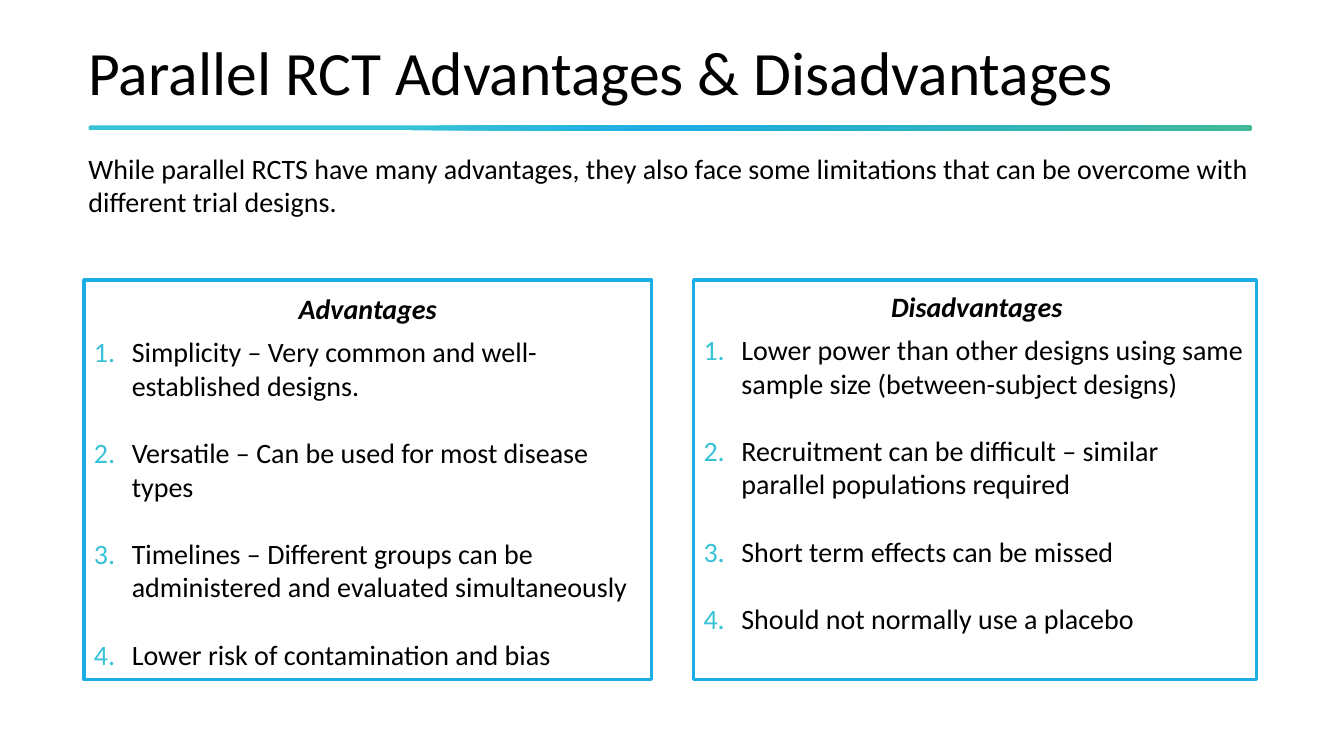
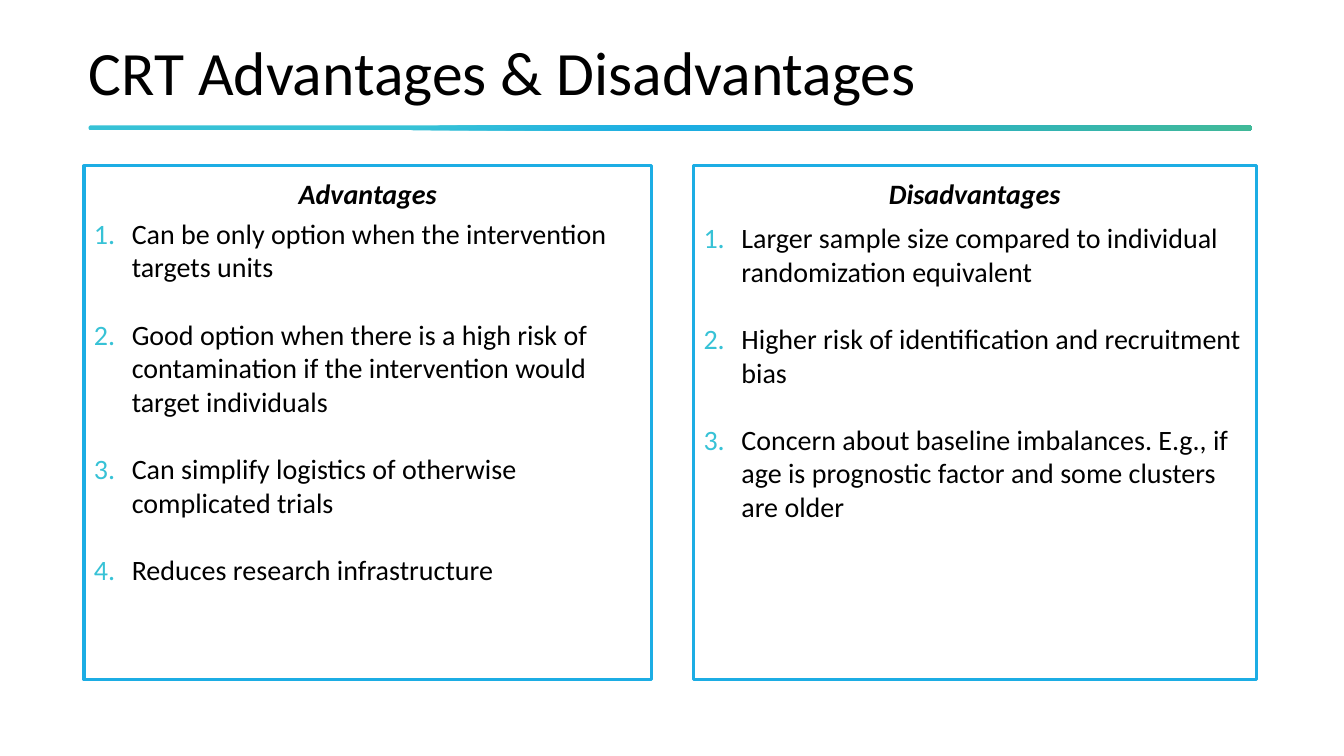
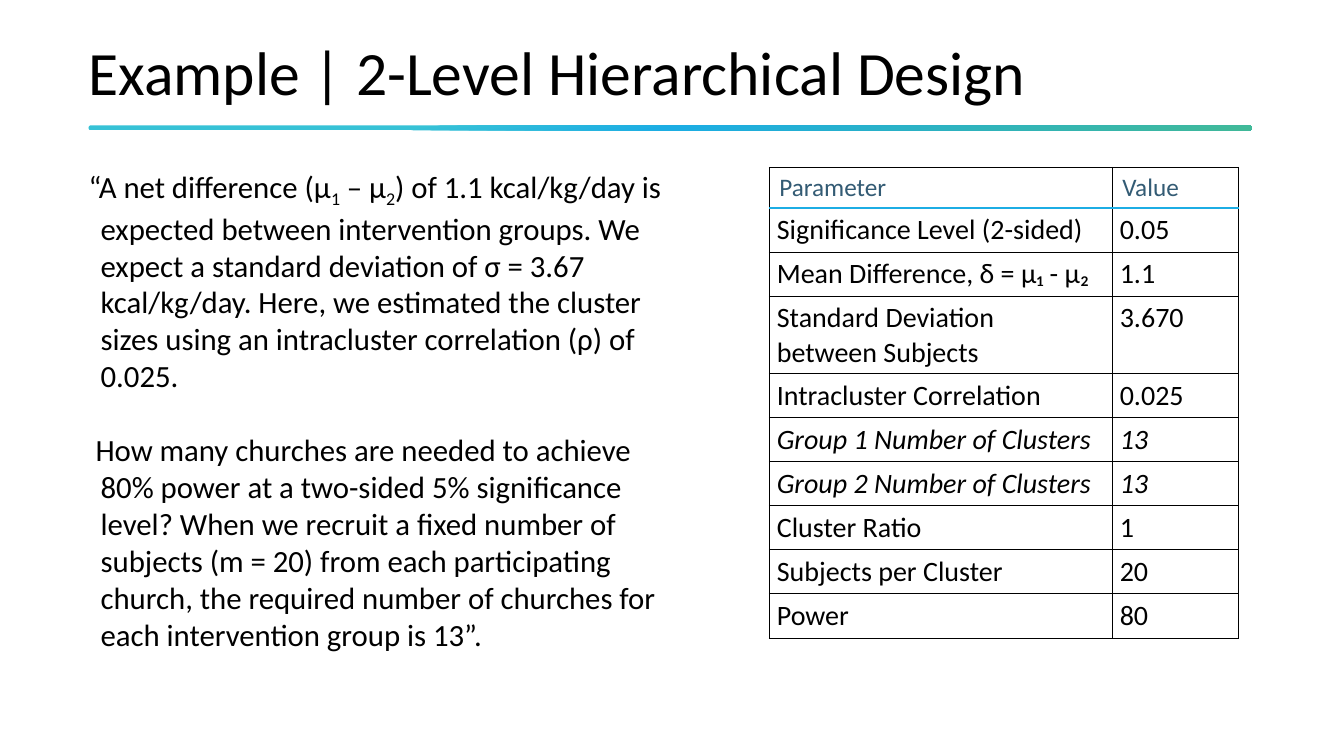
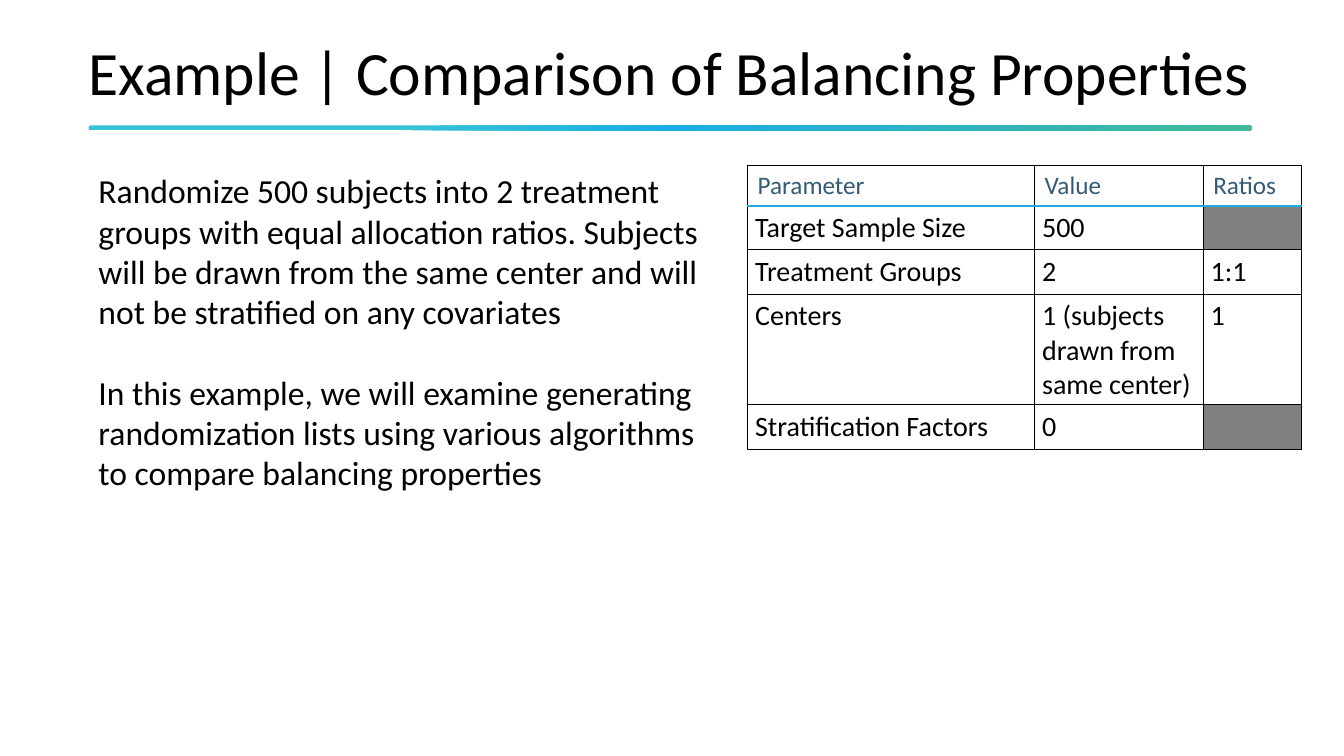
"""Build four slides on trial designs: two comparisons and two worked examples."""
from lxml import etree
from pptx import Presentation
from pptx.dml.color import RGBColor
from pptx.enum.shapes import MSO_SHAPE as Shape
from pptx.enum.text import MSO_ANCHOR as Anchor, PP_ALIGN as Align
from pptx.oxml import parse_xml
from pptx.oxml.ns import nsdecls, qn
from pptx.util import Pt

FONT = "Calibri"
BLACK, WHITE, GREY, NAVY = "000000", "FFFFFF", "808080", "335B74"
BLUE, CYAN, GREEN = "1CADE4", "37C2D6", "42BA97"
BODY_LEFT = 63.25
RULE_STOPS = [(28, CYAN), (50, BLUE), (100, GREEN)]


def rgb(hex_color):
    """Turn a hex string into a colour."""
    return RGBColor.from_string(hex_color)


def add_text(slide, box, texts, size, inset=(7.2, 3.6), gap=0):
    """Add a text box; each text is a string or a list of run strings."""
    frame = slide.shapes.add_textbox(*map(Pt, box)).text_frame
    frame.word_wrap = True
    frame.margin_left = frame.margin_right = Pt(inset[0])
    frame.margin_top = frame.margin_bottom = Pt(inset[1])
    for index, text in enumerate(texts):
        paragraph = frame.add_paragraph() if index else frame.paragraphs[0]
        if index and gap:
            paragraph.space_before = Pt(gap)
        for part in [text] if isinstance(text, str) else text:
            run = paragraph.add_run()
            run.text = part
            run.font.name, run.font.size = FONT, Pt(size)
            run.font.color.rgb = rgb(BLACK)
    return frame


presentation = Presentation()
presentation.slide_width, presentation.slide_height = Pt(960), Pt(540)

titles = [
    "Parallel RCT Advantages & Disadvantages",
    "CRT Advantages & Disadvantages",
    "Example | 2-Level Hierarchical Design",
    "Example | Comparison of Balancing Properties",
]
stops = "".join(
    f'<a:gs pos="{position * 1000}"><a:srgbClr val="{color}"/></a:gs>'
    for position, color in RULE_STOPS
)
slides = []
for title in titles:
    slide = presentation.slides.add_slide(presentation.slide_layouts[6])
    slides.append(slide)
    rule = slide.shapes.add_shape(Shape.ROUNDED_RECTANGLE, Pt(BODY_LEFT), Pt(89.5), Pt(831), Pt(3.6))
    rule.adjustments[0] = 0.5
    rule.shadow.inherit = False
    rule.line.fill.background()
    rule._element.spPr.find(qn("a:prstGeom")).addnext(parse_xml(
        f'<a:gradFill {nsdecls("a")}><a:gsLst>{stops}</a:gsLst>'
        '<a:lin ang="4800000" scaled="0"/></a:gradFill>'
    ))
    frame = add_text(slide, (BODY_LEFT, 17.3, 831, 60.5), [title], 44, inset=(0, 0))
    frame.vertical_anchor = Anchor.BOTTOM
    frame.paragraphs[0].line_spacing = 0.9

parallel, cluster, hierarchy, balancing = slides

add_text(
    parallel, (BODY_LEFT, 108, 834, 92),
    ["While parallel RCTS have many advantages, they also face some limitations "
     "that can be overcome with different trial designs."],
    20, inset=(0, 0),
)

LEFT_PANEL, RIGHT_PANEL = (60, 405.5), (495.5, 402)
PANEL_BOTTOM = 485.5
panels = [
    (parallel, LEFT_PANEL, 200, "Advantages", (185, 205), 235.5, [
        "Simplicity – Very common and well-established designs.",
        "Versatile – Can be used for most disease types",
        "Timelines – Different groups can be administered and evaluated simultaneously",
        "Lower risk of contamination and bias",
    ]),
    (parallel, RIGHT_PANEL, 200, "Disadvantages", (620, 203), 234, [
        "Lower power than other designs using same sample size (between-subject designs)",
        "Recruitment can be difficult – similar parallel populations required",
        "Short term effects can be missed",
        "Should not normally use a placebo",
    ]),
    (cluster, LEFT_PANEL, 118.5, "Advantages", (185, 122.5), 151, [
        "Can be only option when the intervention targets units",
        "Good option when there is a high risk of contamination if the intervention "
        "would target individuals",
        "Can simplify logistics of otherwise complicated trials",
        "Reduces research infrastructure",
    ]),
    (cluster, RIGHT_PANEL, 118.5, "Disadvantages", (618.5, 122.5), 154, [
        "Larger sample size compared to individual randomization equivalent",
        "Higher risk of identification and recruitment bias",
        "Concern about baseline imbalances. E.g., if age is prognostic factor and "
        "some clusters are older",
    ]),
]
for slide, (left, width), top, heading, heading_at, list_top, points in panels:
    panel = slide.shapes.add_shape(
        Shape.RECTANGLE, Pt(left), Pt(top), Pt(width), Pt(PANEL_BOTTOM - top))
    panel.shadow.inherit = False
    panel.fill.solid()
    panel.fill.fore_color.rgb = rgb(WHITE)
    panel.line.color.rgb = rgb(BLUE)
    panel.line.width = Pt(2.25)

    paragraph = add_text(slide, (*heading_at, 155.5, 31.5), [heading], 20).paragraphs[0]
    paragraph.alignment = Align.CENTER
    paragraph.runs[0].font.bold = paragraph.runs[0].font.italic = True

    frame = add_text(slide, (left, list_top, width, PANEL_BOTTOM - list_top), points, 20, gap=24)
    for paragraph in frame.paragraphs:
        properties = paragraph._p.get_or_add_pPr()
        properties.set("marL", str(Pt(27)))
        properties.set("indent", str(Pt(-27)))
        bullet_color = etree.SubElement(properties, qn("a:buClr"))
        etree.SubElement(bullet_color, qn("a:srgbClr"), val=CYAN)
        etree.SubElement(properties, qn("a:buAutoNum"), type="arabicPeriod")

frame = add_text(hierarchy, (BODY_LEFT, 119.5, 417, 390), [
    ["“A net difference (μ", "1", " – μ", "2",
     ") of 1.1 kcal/kg/day is expected between intervention groups. We expect a standard "
     "deviation of σ = 3.67 kcal/kg/day. Here, we estimated the cluster sizes using an "
     "intracluster correlation (ρ) of 0.025."],
    "How many churches are needed to achieve 80% power at a two-sided 5% significance level? "
    "When we recruit a fixed number of subjects (m = 20) from each participating church, the "
    "required number of churches for each intervention group is 13”.",
], 22, inset=(0, 0), gap=26.4)
for paragraph, indent in zip(frame.paragraphs, (-8.64, -3.65)):
    properties = paragraph._p.get_or_add_pPr()
    properties.set("marL", str(Pt(8.64)))
    properties.set("indent", str(Pt(indent)))
for index in (1, 3):
    frame.paragraphs[0].runs[index]._r.get_or_add_rPr().set("baseline", "-25000")

add_text(balancing, (BODY_LEFT, 118, 461, 269), [
    "Randomize 500 subjects into 2 treatment groups with equal allocation ratios. Subjects will "
    "be drawn from the same center and will not be stratified on any covariates",
    "In this example, we will examine generating randomization lists using various algorithms "
    "to compare balancing properties",
], 24, gap=28.8)

tables = [
    (hierarchy, 549.5, 119.5, (245, 90.5), [
        ("Parameter", "Value"),
        ("Significance Level (2-sided)", "0.05"),
        ("Mean Difference, δ = µ₁ - µ₂", "1.1"),
        ("Standard Deviation\nbetween Subjects", "3.670"),
        ("Intracluster Correlation", "0.025"),
        ("Group 1 Number of Clusters", "13"),
        ("Group 2 Number of Clusters", "13"),
        ("Cluster Ratio", "1"),
        ("Subjects per Cluster", "20"),
        ("Power", "80"),
    ]),
    (balancing, 534, 118, (205, 120.5, 70), [
        ("Parameter", "Value", "Ratios"),
        ("Target Sample Size", "500", ""),
        ("Treatment Groups", "2", "1:1"),
        ("Centers", "1 (subjects drawn from same center)", "1"),
        ("Stratification Factors", "0", ""),
    ]),
]
for slide, left, top, widths, rows in tables:
    heights = [29] + [31.5] * (len(rows) - 1)
    table = slide.shapes.add_table(
        len(rows), len(widths), Pt(left), Pt(top), Pt(sum(widths)), Pt(sum(heights))).table
    table.first_row = table.horz_banding = False
    for column, width in zip(table.columns, widths):
        column.width = Pt(width)
    for row_index, (values, height) in enumerate(zip(rows, heights)):
        table.rows[row_index].height = Pt(height)
        is_header = row_index == 0
        for column_index, value in enumerate(values):
            cell = table.cell(row_index, column_index)
            cell.margin_left = cell.margin_right = Pt(7.2 if is_header else 5.4)
            cell.text_frame.text = value
            for paragraph in cell.text_frame.paragraphs:
                for run in paragraph.runs:
                    run.font.name = FONT
                    run.font.size = Pt(18 if is_header else 20)
                    run.font.color.rgb = rgb(NAVY if is_header else BLACK)
                    run.font.italic = values[0].startswith("Group")
            for side in "LRTB":
                is_accent = (row_index, side) in ((0, "B"), (1, "T"))
                border = etree.SubElement(
                    cell._tc.get_or_add_tcPr(), qn(f"a:ln{side}"),
                    w=str(Pt(1.5 if is_accent else 0.75)))
                border_fill = etree.SubElement(border, qn("a:solidFill"))
                etree.SubElement(border_fill, qn("a:srgbClr"), val=BLUE if is_accent else BLACK)
            cell.fill.solid()
            cell.fill.fore_color.rgb = rgb(WHITE if value else GREY)

presentation.save("out.pptx")
